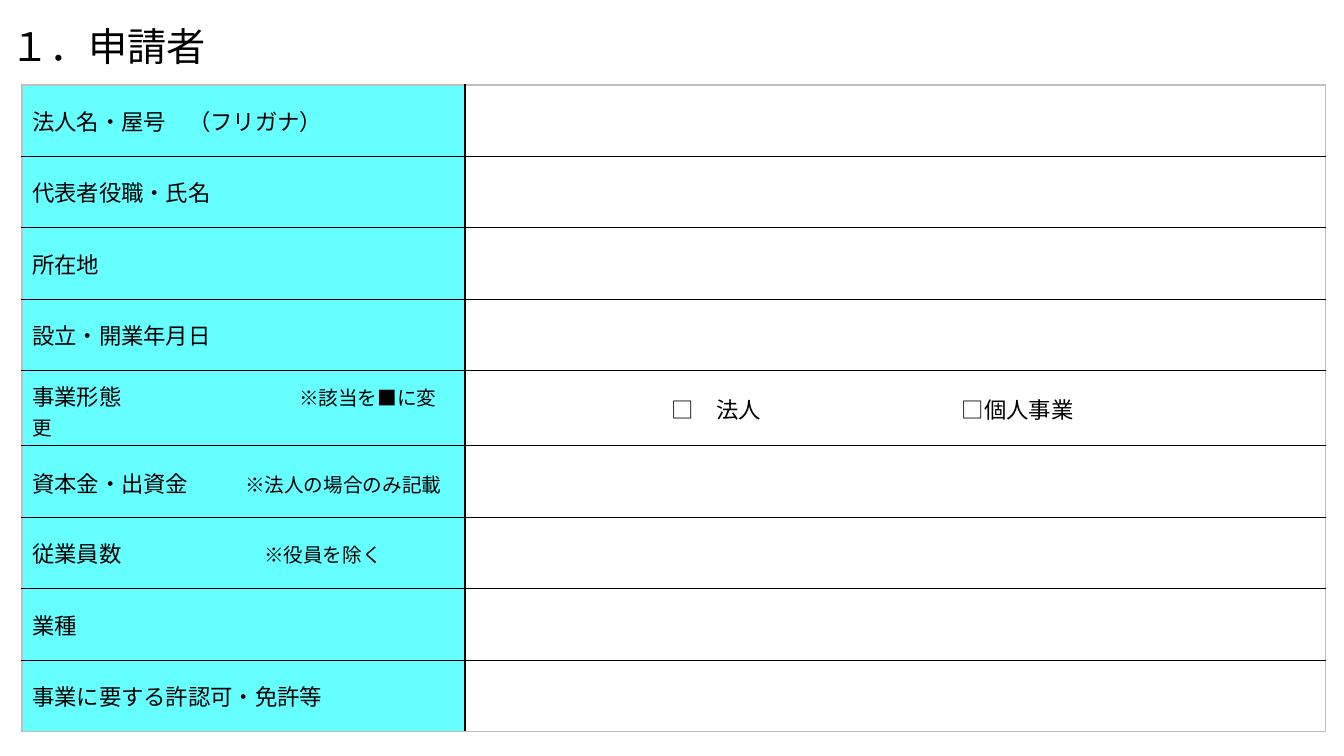
import pptx
import pptx.util
import pptx.dml.color
import pptx.enum.lang
import pptx.enum.text
import pptx.oxml.ns
from lxml import etree

PX = 914400 / 100.8
FONT = "Noto Sans CJK JP"
BLACK, GREY, CYAN = "000000", "BFBFBF", "66FFFF"
ROWS = [
    ([("法人名・屋号　（フリガナ）", 16)], None),
    ([("代表者役職・氏名", 16)], None),
    ([("所在地", 16)], None),
    ([("設立・開業年月日", 16)], None),
    ([("事業形態", 16), ("\t", 18), ("※該当を■に変更", 14)], 267),
    ([("資本金・出資金", 16), ("\t", 18), ("※法人の場合のみ記載", 14)], 213),
    ([("従業員数", 16), ("\t※役員を除く", 14)], 232),
    ([("業種", 16)], None),
    ([("事業に要する許認可・免許等", 16)], None),
]
FORM_ROW = 4
FORM_CHOICES = [("□　法人\t□個人事業", 16)]


def px(n):
    """Turn whole px into EMU."""
    return pptx.util.Emu(round(n * PX))


def rgb(value):
    """Turn a hex string into a colour."""
    return pptx.dml.color.RGBColor.from_string(value)


def sub(parent, tag, **attrs):
    """Add an XML child with attributes."""
    return etree.SubElement(parent, pptx.oxml.ns.qn(tag), attrs)


def assign(obj, values):
    """Set attributes from a dict of format values."""
    for name, value in values.items():
        setattr(obj, name, value)


class Form:
    """Hold the style and the current slide."""

    def __init__(self, prs):
        """Add a title-only slide."""
        self.slide = prs.slides.add_slide(prs.slide_layouts[5])
        self.font = {"name": FONT, "bold": False,
                     "language_id": pptx.enum.lang.MSO_LANGUAGE_ID.JAPANESE}

    def add_text(self, p, runs, tab=None):
        """Put sized runs into a left-aligned paragraph."""
        p.alignment = pptx.enum.text.PP_ALIGN.LEFT
        if tab:
            tabs = sub(p._p.get_or_add_pPr(), "a:tabLst")
            sub(tabs, "a:tab", pos=str(px(tab)), algn="l")
        for text, size in runs:
            r = p.add_run()
            r.text = text
            assign(r.font, {**self.font, "size": pptx.util.Pt(size)})
            r.font.color.rgb = rgb(BLACK)
            sub(r.font._element, "a:ea", typeface=FONT)

    def title(self, text, size, x, y, w, h):
        """Place and format the title placeholder."""
        sp = self.slide.shapes.title
        assign(sp, {"left": px(x), "top": px(y), "width": px(w), "height": px(h)})
        tf = sp.text_frame
        assign(tf, {"word_wrap": True,
                    "auto_size": pptx.enum.text.MSO_AUTO_SIZE.NONE,
                    "vertical_anchor": pptx.enum.text.MSO_ANCHOR.MIDDLE})
        p = tf.paragraphs[0]
        p.line_spacing = 0.9
        self.add_text(p, [(text, size)])

    def borders(self, cell, colors):
        """Draw the four edges of a cell."""
        tc_pr = cell._tc.get_or_add_tcPr()
        for side, color in zip("LRTB", colors):
            ln = sub(tc_pr, f"a:ln{side}", w=str(pptx.util.Pt(1)))
            sub(sub(ln, "a:solidFill"), "a:srgbClr", val=color)

    def table(self, count, x, y, widths, h):
        """Add a plain grid with grey outer and black inner lines."""
        tbl = self.slide.shapes.add_table(
            count, len(widths), px(x), px(y), px(sum(widths)), px(h)).table
        assign(tbl, {"first_row": False, "horz_banding": False})
        for column, width in zip(tbl.columns, widths):
            column.width = px(width)
        for i in range(count):
            for j in range(len(widths)):
                cell = tbl.cell(i, j)
                outer = (j == 0, j == len(widths) - 1, i == 0, i == count - 1)
                self.borders(cell, [GREY if edge else BLACK for edge in outer])
                cell.fill.background()
                cell.vertical_anchor = pptx.enum.text.MSO_ANCHOR.MIDDLE
        return tbl

    def label(self, cell, runs, tab):
        """Fill a label cell."""
        cell.fill.solid()
        cell.fill.fore_color.rgb = rgb(CYAN)
        self.add_text(cell.text_frame.paragraphs[0], runs, tab)

    def choices(self, cell, runs, indent, tab):
        """Set check boxes at an indent."""
        cell.margin_left = px(indent)
        self.add_text(cell.text_frame.paragraphs[0], runs, tab)


def main():
    """Build the applicant slide."""
    prs = pptx.Presentation()
    assign(prs, {"slide_width": px(1344), "slide_height": px(756)})
    form = Form(prs)
    form.title("１．申請者", 28, 0, -1, 1159, 100)
    tbl = form.table(len(ROWS), 22, 85, [443, 861], 643)
    for i, (runs, tab) in enumerate(ROWS):
        form.label(tbl.cell(i, 0), runs, tab)
    form.choices(tbl.cell(FORM_ROW, 1), FORM_CHOICES, 207, 290)
    prs.save("out.pptx")


if __name__ == "__main__":
    main()
